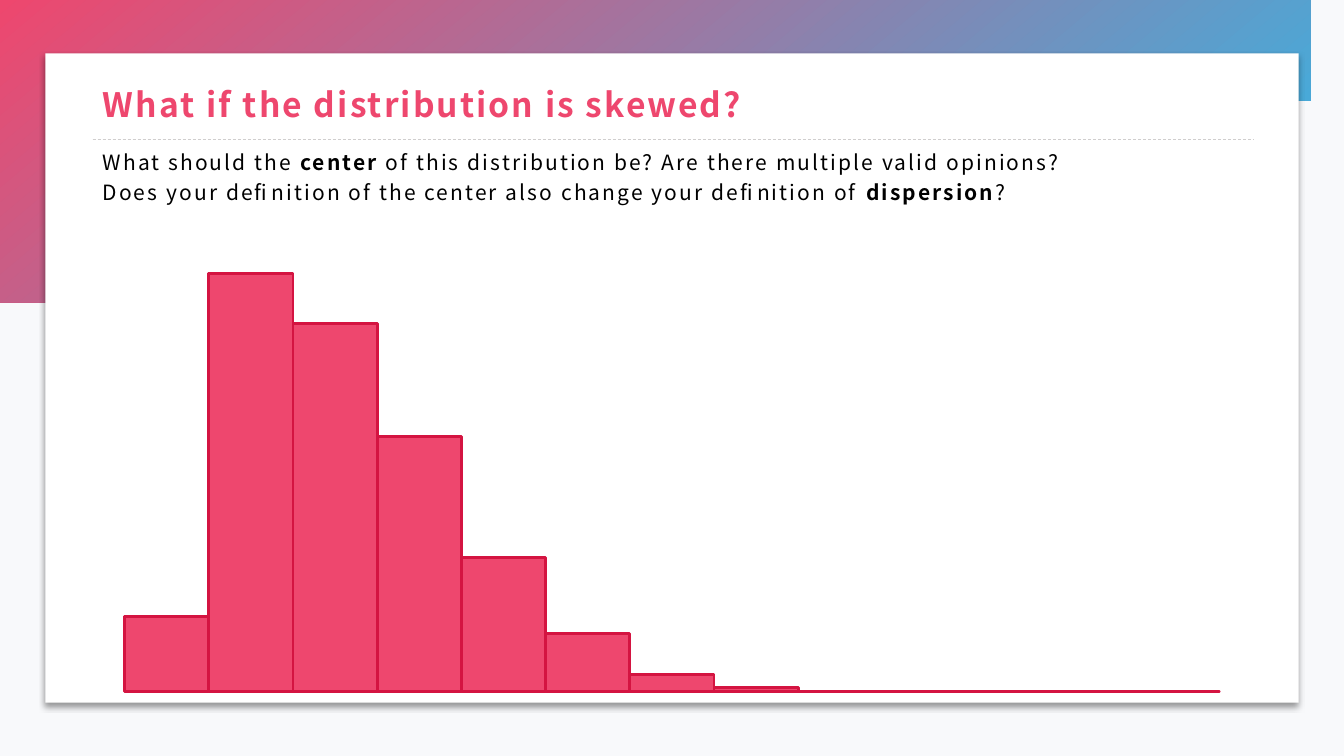
from lxml import etree
from pptx import Presentation
from pptx import util as u
from pptx.chart.data import CategoryChartData
from pptx.dml.color import RGBColor
from pptx.enum import chart as ch, dml, shapes, text
from pptx.oxml import ns, parse_xml

FONT = "Noto Sans CJK JP"
PINK = "EE476E"
SHADE = """<a:effectLst %s><a:outerShdw blurRad="50800" dist="38100"
dir="5400000" algn="t" rotWithShape="0"><a:srgbClr val="000000">
<a:alpha val="40000"/></a:srgbClr></a:outerShdw></a:effectLst>""" % ns.nsdecls("a")
WAVE = [
    [(0, 2.58), (1.22, 3.04), (2.66, 3.11), (3.93, 2.74)],
    [(3.93, 2.74), (5.3, 2.35), (6.48, 1.51), (7.92, 1.36)],
    [(7.92, 1.36), (9.36, 1.21), (10.88, 1.8), (12.27, 1.42)],
    [(12.27, 1.42), (12.67, 1.31), (13.04, 1.11), (13.33, 0.85)],
]


def rgb(code):
    """Turn a hex string into a colour."""
    return RGBColor.from_string(code)


def curve(pts, steps=24):
    """List points along a cubic curve, without its start."""
    out = []
    for i in range(1, steps + 1):
        t = i / steps
        s = 1 - t
        mix = (s ** 3, 3 * s * s * t, 3 * s * t * t, t ** 3)
        out.append(tuple(sum(m * p[k] for m, p in zip(mix, pts)) for k in (0, 1)))
    return out


def wave(slide, left, top):
    """Draw the gradient wave from its top left corner."""
    pts = [WAVE[0][0]]
    for part in WAVE:
        pts += curve(part)
    pts.append((13.33, 0))
    pen = slide.shapes.build_freeform(0, 0, scale=u.Inches(1))
    pen.add_line_segments(pts, close=True)
    shape = pen.convert_to_shape(u.Inches(left), u.Inches(top))
    shape.shadow.inherit = False
    shape.line.fill.background()
    shape.fill.gradient()
    shape.fill.gradient_angle = 310
    for stop, code in zip(shape.fill.gradient_stops, (PINK, "2DBAEA")):
        stop.color.rgb = rgb(code)


def card(slide, left, top, width, height):
    """Draw the white card and the dashed rule under its heading."""
    box = slide.shapes.add_shape(
        shapes.MSO_SHAPE.RECTANGLE, *map(u.Inches, (left, top, width, height)))
    box.fill.solid()
    box.fill.fore_color.rgb = rgb("FFFFFF")
    box.line.fill.background()
    box._element.spPr.append(parse_xml(SHADE))
    y = top + 0.85
    rule = slide.shapes.add_connector(
        shapes.MSO_CONNECTOR.STRAIGHT,
        *map(u.Inches, (left + 0.47, y, left + width - 0.45, y)))
    rule.line.color.rgb = rgb("D0CECE")
    rule.line.width = u.Pt(0.5)
    rule.line.dash_style = dml.MSO_LINE.DASH
    etree.SubElement(rule._element.spPr, ns.qn("a:effectLst"))


def bars(slide, left, top, width, height):
    """Place the skewed histogram."""
    data = CategoryChartData()
    data.categories = [str(n) for n in range(1, 14)]
    data.add_series("Series 1", [18, 100, 88, 61, 32, 14, 4, 1, 0, 0, 0, 0, 0])
    chart = slide.shapes.add_chart(
        ch.XL_CHART_TYPE.COLUMN_CLUSTERED,
        *map(u.Inches, (left, top, width, height)), data).chart
    chart.has_legend = chart.has_title = False
    chart.font.name = FONT
    chart.font.size = u.Pt(10)
    chart.font.color.rgb = rgb("000000")
    for axis in (chart.category_axis, chart.value_axis):
        axis.has_major_gridlines = False
        axis.visible = False
    chart.value_axis.minimum_scale = 0
    chart.value_axis.maximum_scale = 125
    plot = chart.plots[0]
    plot.gap_width = 0
    plot.overlap = -27
    plot.vary_by_categories = False
    form = plot.series[0].format
    form.fill.solid()
    form.fill.fore_color.rgb = rgb(PINK)
    form.line.color.rgb = rgb("D41441")
    form.line.width = u.Pt(2)


def words(slide, box, lines, size, code, lead, gap=0, anchor="TOP"):
    """Write one paragraph of lines, each a list of (text, bold) runs."""
    frame = slide.shapes.add_textbox(*map(u.Inches, box)).text_frame
    frame.word_wrap = True
    frame.vertical_anchor = text.MSO_ANCHOR[anchor]
    para = frame.paragraphs[0]
    para.line_spacing = lead
    para.space_before = u.Pt(gap)
    for i, line in enumerate(lines):
        if i:
            para.add_line_break()
        for part, bold in line:
            run = para.add_run()
            run.text = part
            run.font.name = FONT
            run.font.size = u.Pt(size)
            run.font.bold = bold
            run.font.color.rgb = rgb(code)
            run.font._element.set("spc", "150")


def main():
    """Build and save the slide."""
    deck = Presentation()
    deck.slide_width, deck.slide_height = u.Inches(13.33), u.Inches(7.5)
    slide = deck.slides.add_slide(deck.slide_layouts[6])
    slide.background.fill.solid()
    slide.background.fill.fore_color.rgb = rgb("F8F9FB")
    wave(slide, 0, 0)
    card(slide, 0.45, 0.53, 12.43, 6.44)
    bars(slide, 1.01, 1.57, 11.31, 5.4)
    words(slide, (0.92, 0.74, 11.5, 0.64),
          [[("What if the distribution is skewed?", True)]],
          24, PINK, 0.9, anchor="MIDDLE")
    words(slide, (0.92, 1.38, 11.51, 5.37), [
        [("What should the ", False), ("center", True),
         (" of this distribution be? Are there multiple valid opinions?", False)],
        [("Does your definition of the center also change your definition of ", False),
         ("dispersion", True), ("?", False)],
    ], 15, "000000", 1.2, gap=3)
    deck.save("out.pptx")


if __name__ == "__main__":
    main()
